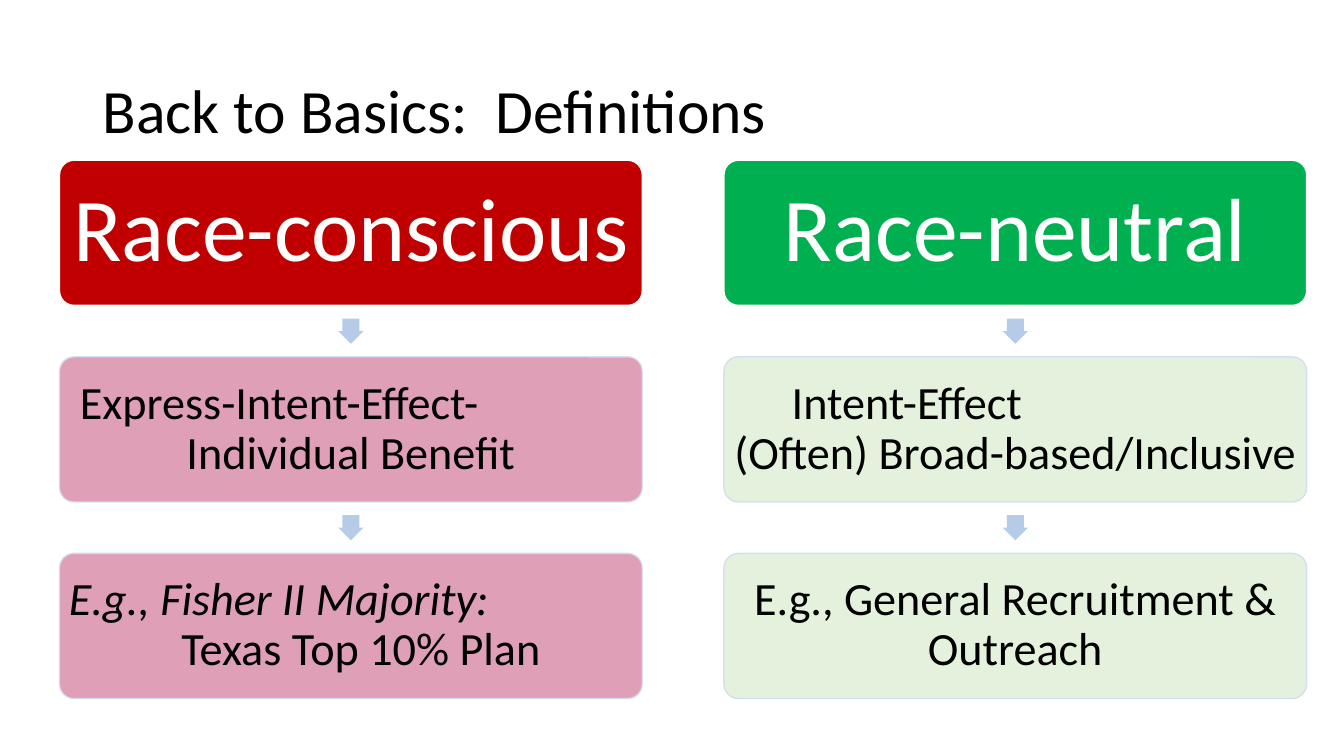
from dataclasses import dataclass
from lxml.etree import SubElement
from pptx import Presentation
from pptx.dml.color import RGBColor
from pptx.enum.shapes import MSO_SHAPE
from pptx.enum.text import MSO_ANCHOR, MSO_AUTO_SIZE, PP_ALIGN
from pptx.oxml.ns import qn
from pptx.util import Inches, Pt


@dataclass(frozen=True)
class Theme:
    """Colours, font and type sizes of the slide."""
    font: str = "Calibri"
    title_size: int = 44
    head_size: int = 64
    body_size: int = 33
    ink: str = "000000"
    paper: str = "FFFFFF"
    red: str = "C00000"
    pink: str = "DB95B0"
    green: str = "00B050"
    mint: str = "E2F0D9"
    arrow: str = "B5CBE7"
    edge: str = "D2DEEF"


THEME = Theme()
LEFT, CENTER = PP_ALIGN.LEFT, PP_ALIGN.CENTER
CARD_W, CARD_H, CARD_PITCH = 5.78, 1.44, 1.95
ARROW = 0.25
COLUMN_LEFT, COLUMN_TOP, COLUMN_PITCH = 0.59, 1.59, 6.59

COLUMNS = [
    (THEME.red, THEME.pink, "Race-conscious", [
        [("Express-Intent-Effect-", LEFT, 0.11, False),
         ("Individual Benefit", CENTER, 0, False)],
        [("E.g., Fisher II Majority:", LEFT, 0, True),
         ("Texas Top 10% Plan", CENTER, 0.2, False)],
    ]),
    (THEME.green, THEME.mint, "Race-neutral", [
        [("Intent-Effect", LEFT, 0.58, False),
         ("(Often) Broad-based/Inclusive", CENTER, 0, False)],
        [("E.g., General Recruitment & Outreach", CENTER, 0, False)],
    ]),
]


def apply(obj, values):
    """Set each named attribute of an object."""
    for name, value in values.items():
        setattr(obj, name, value)


def paint(fill, color, alpha=100):
    """Give a fill one colour and an opacity in percent."""
    fill.solid()
    fill.fore_color.rgb = RGBColor.from_string(color)
    if alpha < 100:
        clr = fill._xPr.find(qn("a:solidFill"))[0]
        SubElement(clr, qn("a:alpha")).set("val", str(alpha * 1000))


def write(p, text, size, color, italic=False):
    """Write one formatted run into a paragraph."""
    p.line_spacing = 0.9
    r = p.add_run()
    r.text = text
    apply(r.font, {"name": THEME.font, "size": Pt(size), "italic": italic})
    r.font.color.rgb = RGBColor.from_string(color)


def add_title(s, left, top, width, height):
    """Place and fill the title placeholder."""
    sp = s.shapes.title
    apply(sp, {"left": Inches(left), "top": Inches(top),
               "width": Inches(width), "height": Inches(height)})
    apply(sp.text_frame, {"vertical_anchor": MSO_ANCHOR.MIDDLE, "word_wrap": True,
                          "auto_size": MSO_AUTO_SIZE.NONE})
    p = sp.text_frame.paragraphs[0]
    p.alignment = LEFT
    write(p, "Back to Basics:  Definitions", THEME.title_size, THEME.ink)


def add_card(s, left, top, lines, size, ink, fill, edge, alpha, inset):
    """Draw a rounded card with aligned and indented lines of text."""
    sp = s.shapes.add_shape(MSO_SHAPE.ROUNDED_RECTANGLE, Inches(left), Inches(top),
                            Inches(CARD_W), Inches(CARD_H))
    sp.shadow.inherit = False
    sp.adjustments[0] = 0.1
    paint(sp.fill, fill, alpha)
    paint(sp.line.fill, edge, alpha)
    sp.line.width = Pt(1)
    tf = sp.text_frame
    sides = ("left", "right", "top", "bottom")
    apply(tf, {f"margin_{side}": Inches(inset) for side in sides})
    apply(tf, {"word_wrap": True, "vertical_anchor": MSO_ANCHOR.MIDDLE})
    for i, (text, align, indent, italic) in enumerate(lines):
        p = tf.add_paragraph() if i else tf.paragraphs[0]
        p.alignment = align
        p._p.get_or_add_pPr().set("marL", str(Inches(indent)))
        write(p, text, size, ink, italic)


def add_arrow(s, center, top):
    """Draw a small arrow pointing down."""
    sp = s.shapes.add_shape(MSO_SHAPE.RIGHT_ARROW, Inches(center - ARROW / 2),
                            Inches(top), Inches(ARROW), Inches(ARROW))
    sp.shadow.inherit = False
    sp.rotation = 90
    sp.adjustments[0], sp.adjustments[1] = 0.67, 0.5
    paint(sp.fill, THEME.arrow)
    sp.line.fill.background()


def add_column(s, left, top, strong, pale, head, cards):
    """Stack a heading card and its detail cards, joined by arrows."""
    add_card(s, left, top, [(head, CENTER, 0, False)], THEME.head_size, THEME.paper,
             strong, THEME.paper, 100, 0.08)
    gap = (CARD_PITCH - CARD_H - ARROW) / 2
    for row, lines in enumerate(cards, 1):
        y = top + row * CARD_PITCH
        add_arrow(s, left + CARD_W / 2, y - gap - ARROW)
        add_card(s, left, y, lines, THEME.body_size, THEME.ink,
                 pale, THEME.edge, 90, 0.05)


def main():
    """Build and save the slide."""
    prs = Presentation()
    apply(prs, {"slide_width": Inches(13.33), "slide_height": Inches(7.5)})
    s = prs.slides.add_slide(prs.slide_layouts[5])
    paint(s.background.fill, THEME.paper)
    add_title(s, 0.92, 0.4, 11.5, 1.45)
    for i, column in enumerate(COLUMNS):
        add_column(s, COLUMN_LEFT + i * COLUMN_PITCH, COLUMN_TOP, *column)
    prs.save("out.pptx")


if __name__ == "__main__":
    main()
